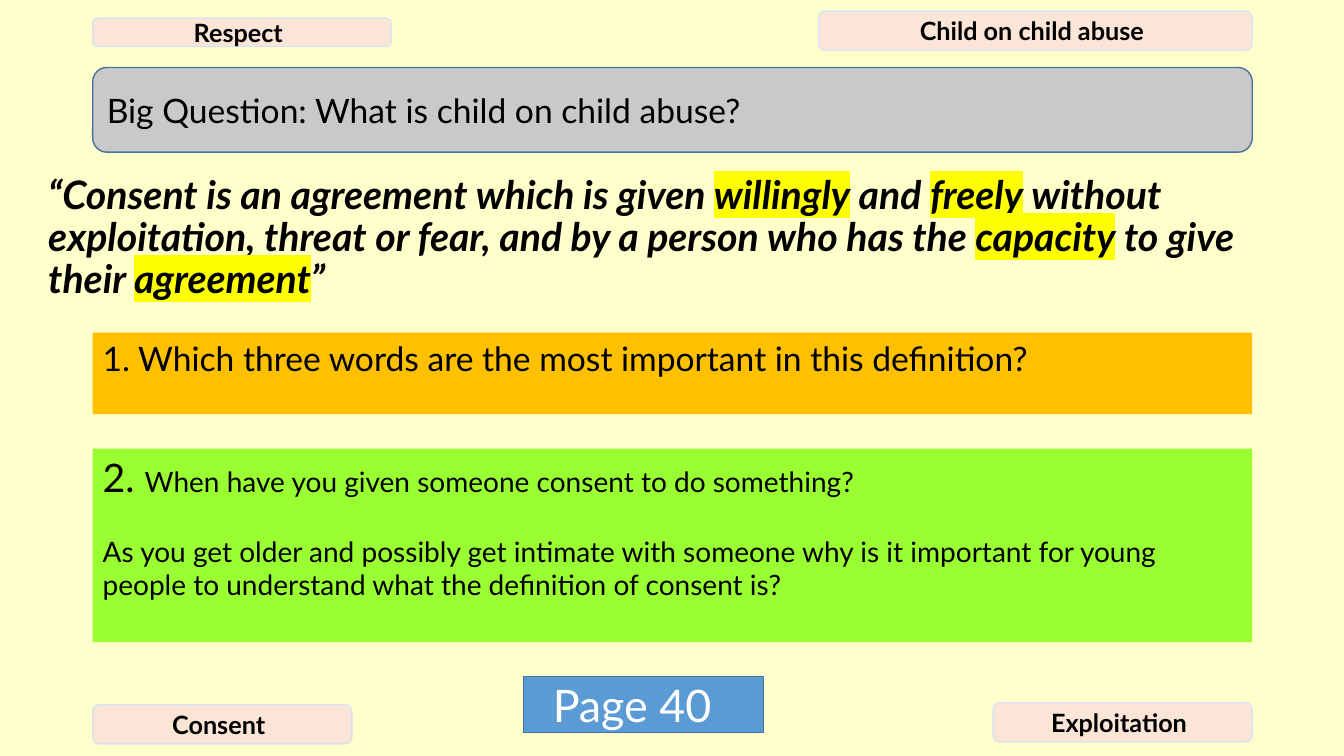
from dataclasses import dataclass
from typing import Optional

import lxml.etree
import pptx
import pptx.dml.color
import pptx.enum.shapes
import pptx.enum.text
import pptx.oxml.ns
import pptx.util

Inches = pptx.util.Inches
Kind = pptx.enum.shapes.MSO_SHAPE
Align = pptx.enum.text.PP_ALIGN
Anchor = pptx.enum.text.MSO_ANCHOR


@dataclass(frozen=True)
class Theme:
    font: str = "Lato"
    background: str = "FFFFCC"
    ink: str = "000000"
    white: str = "FFFFFF"
    highlight: str = "FFFF00"
    grey: str = "C9C9C9"
    peach: str = "FBE5D6"
    pale_blue: str = "DAE3F3"
    blue: str = "5B9BD5"
    dark_blue: str = "43739E"
    orange: str = "FFC000"
    green: str = "99FF33"
    label: float = 18
    detail: float = 20
    question: float = 24
    quote: float = 28
    page: float = 32


THEME = Theme()


@dataclass(frozen=True)
class Span:
    text: str
    size: float
    color: str = THEME.ink
    bold: bool = False
    italic: bool = False
    highlighted: bool = False


@dataclass(frozen=True)
class Box:
    left: float
    top: float
    width: float
    height: float
    paragraphs: list[list[Span]]
    fill: str
    line: Optional[str] = None
    kind: Kind = Kind.RECTANGLE
    anchor: Anchor = Anchor.MIDDLE
    align: Align = Align.LEFT
    right_inset: float = 0.1


def rgb(color: str) -> pptx.dml.color.RGBColor:
    return pptx.dml.color.RGBColor.from_string(color)


def highlight_run(run) -> None:
    highlight = lxml.etree.Element(pptx.oxml.ns.qn("a:highlight"))
    color = lxml.etree.SubElement(highlight, pptx.oxml.ns.qn("a:srgbClr"))
    color.set("val", THEME.highlight)
    run.font._element.find(pptx.oxml.ns.qn("a:latin")).addprevious(highlight)


def write_paragraph(paragraph, spans: list[Span]) -> None:
    for span in spans:
        run = paragraph.add_run()
        run.text = span.text
        run.font.size = pptx.util.Pt(span.size)
        run.font.bold = span.bold
        run.font.italic = span.italic
        run.font.color.rgb = rgb(span.color)
        run.font.name = THEME.font
        if span.highlighted:
            highlight_run(run)


def draw_box(slide, box: Box) -> None:
    shape = slide.shapes.add_shape(
        box.kind, Inches(box.left), Inches(box.top), Inches(box.width), Inches(box.height))
    shape.shadow.inherit = False
    shape.fill.solid()
    shape.fill.fore_color.rgb = rgb(box.fill)
    if box.line:
        shape.line.color.rgb = rgb(box.line)
        shape.line.width = pptx.util.Pt(1)
    else:
        shape.line.fill.background()
    frame = shape.text_frame
    frame.word_wrap = True
    frame.vertical_anchor = box.anchor
    frame.margin_right = Inches(box.right_inset)
    for index, spans in enumerate(box.paragraphs):
        paragraph = frame.add_paragraph() if index else frame.paragraphs[0]
        paragraph.alignment = box.align
        if index:
            paragraph.space_before = pptx.util.Pt(24)
        write_paragraph(paragraph, spans)


def draw_quote(slide, marked_text: str) -> None:
    """Write the definition; words between asterisks are highlighted."""
    text_box = slide.shapes.add_textbox(Inches(0.38), Inches(1.69), Inches(12.58), Inches(1.6))
    text_box.text_frame.word_wrap = True
    paragraph = text_box.text_frame.paragraphs[0]
    paragraph.line_spacing = 0.9
    write_paragraph(paragraph, [
        Span(part, THEME.quote, bold=True, italic=True, highlighted=index % 2 == 1)
        for index, part in enumerate(marked_text.split("*"))])


def topic_label(text: str, left: float, top: float, width: float, height: float = 0.39) -> Box:
    return Box(left, top, width, height, [[Span(text, THEME.label, bold=True)]],
               THEME.peach, THEME.pale_blue, Kind.ROUNDED_RECTANGLE,
               align=Align.CENTER, right_inset=0.17)


LEFT, WIDTH = 0.92, 11.5

BOXES = [
    Box(LEFT, 0.67, WIDTH, 0.84,
        [[Span("Big Question: What is child on child abuse?", THEME.question)]],
        THEME.grey, THEME.dark_blue, Kind.ROUNDED_RECTANGLE),
    topic_label("Respect", LEFT, 0.18, 2.96, 0.28),
    topic_label("Child on child abuse", 8.12, 0.11, 4.3),
    topic_label("Consent", LEFT, 6.99, 2.57),
    topic_label("Exploitation", 9.85, 6.97, 2.57),
    Box(LEFT, 3.3, WIDTH, 0.81,
        [[Span("1. Which three words are the most important in this definition?",
               THEME.question)]],
        THEME.orange, anchor=Anchor.TOP),
    Box(5.19, 6.71, 2.38, 0.56, [[Span("Page 40", THEME.page, THEME.white)]],
        THEME.blue, THEME.dark_blue, align=Align.CENTER, right_inset=0.32),
    Box(LEFT, 4.45, WIDTH, 1.92,
        [[Span("2. ", THEME.quote),
          Span("When have you given someone consent to do something?", THEME.detail)],
         [Span("As you get older and possibly get intimate with someone why is it important "
               "for young people to understand what the definition of consent is?",
               THEME.detail)]],
        THEME.green, anchor=Anchor.TOP),
]

QUOTE = ("“Consent is an agreement which is given *willingly* and *freely* without "
         "exploitation, threat or fear, and by a person who has the *capacity* to give "
         "their *agreement*”")


def main() -> None:
    presentation = pptx.Presentation()
    presentation.slide_width = Inches(13.33)
    presentation.slide_height = Inches(7.5)
    slide = presentation.slides.add_slide(presentation.slide_layouts[6])
    slide.background.fill.solid()
    slide.background.fill.fore_color.rgb = rgb(THEME.background)
    for box in BOXES:
        draw_box(slide, box)
    draw_quote(slide, QUOTE)
    presentation.save("out.pptx")


if __name__ == "__main__":
    main()
